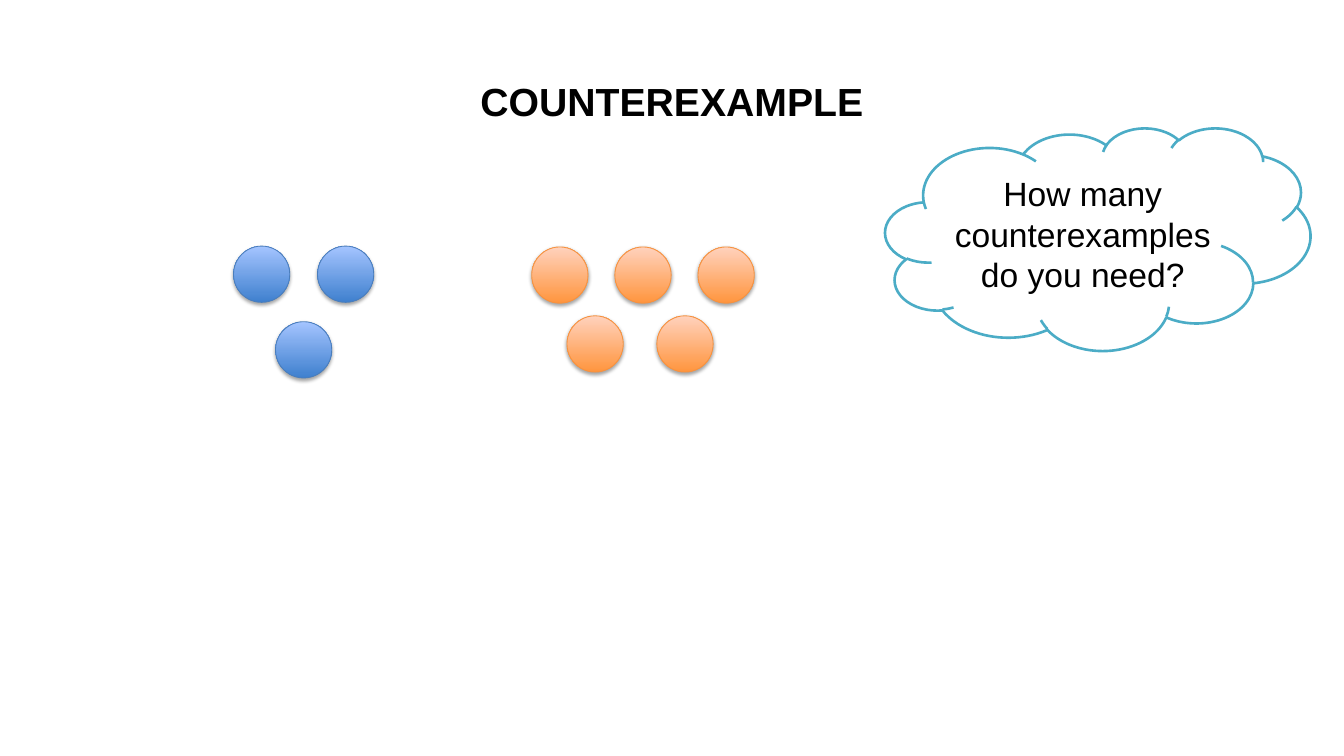
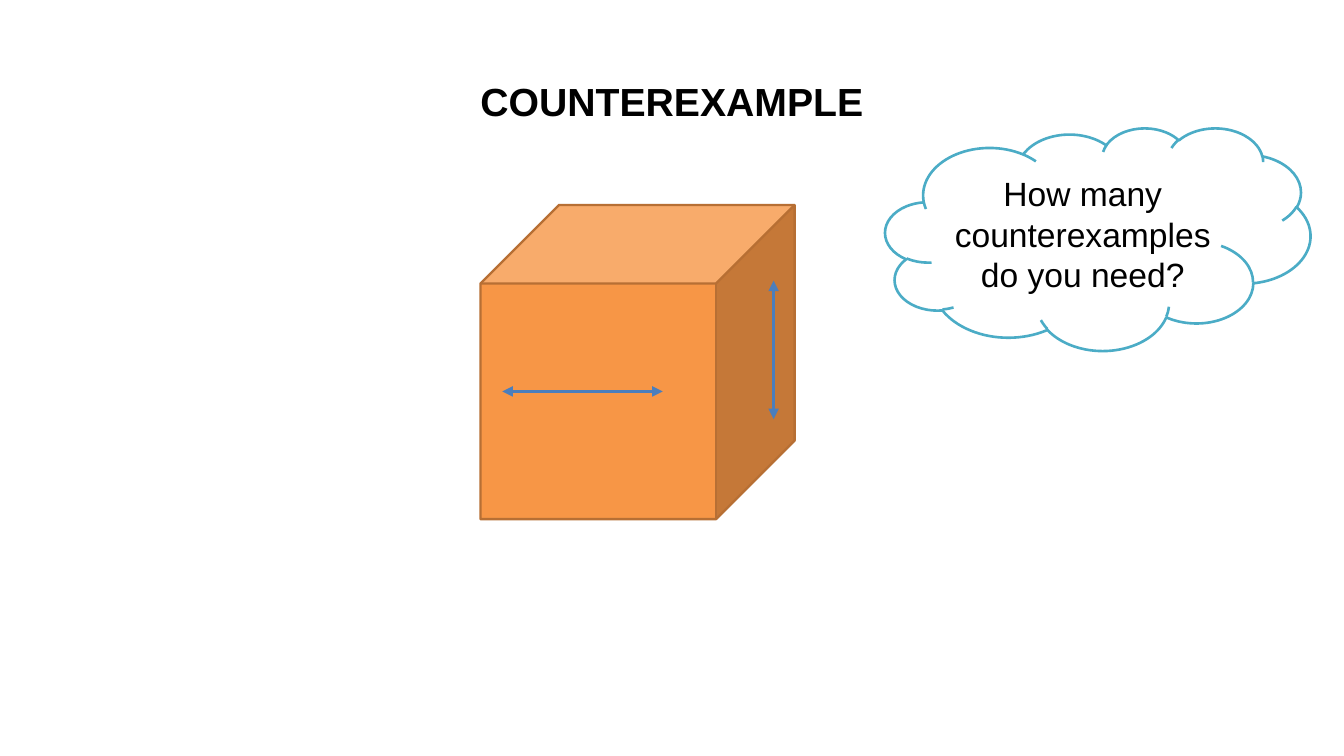
from lxml import etree
from pptx import Presentation
from pptx import util as u
from pptx.dml.color import RGBColor
from pptx.enum import shapes, text
from pptx.oxml.ns import qn

COLORS = {
    "text": "000000",
    "white": "FFFFFF",
    "cloud line": "4BACC6",
    "cube": "F79646",
    "cube line": "B76F34",
    "arrow": "4B7EBC",
}
# Bottom colour, top colour, outline
BALLS = {
    "blue": ("3F80CE", "A4C4FF", "4B7EBC"),
    "orange": ("FF953E", "FFD2BD", "F69240"),
}
FONT = "Arial"
TITLE_ONLY = 5

presentation = Presentation()
presentation.slide_width, presentation.slide_height = u.Inches(16), u.Inches(9)
COLUMN = presentation.slide_width // 16
ROW = presentation.slide_height // 9


def place(*cells):
    """Turn alternating column and row counts into lengths."""
    return [round(cell * (ROW if i % 2 else COLUMN)) for i, cell in enumerate(cells)]


def add_shape(slide, kind, cells, line, width, fill=None):
    shape = slide.shapes.add_shape(kind, *place(*cells))
    shape.shadow.inherit = False
    shape.line.color.rgb = RGBColor.from_string(line)
    shape.line.width = u.Pt(width)
    if fill:
        shape.fill.solid()
        shape.fill.fore_color.rgb = RGBColor.from_string(fill)
    return shape


# Title and question cloud on both slides
slides = []
for _ in range(2):
    slide = presentation.slides.add_slide(presentation.slide_layouts[TITLE_ONLY])
    slides.append(slide)

    title = slide.shapes.title
    title.left, title.top, title.width, title.height = place(0, 0.86, 16, 0.67)
    cloud = add_shape(slide, shapes.MSO_SHAPE.CLOUD, (10.54, 1.52, 5.06, 2.65),
                      COLORS["cloud line"], 2.25, COLORS["white"])

    for shape, wording, size, bold in (
        (title, "COUNTEREXAMPLE", 33.6, True),
        (cloud, "How many counterexamples do you need?", 28.8, False),
    ):
        frame = shape.text_frame
        frame.text = wording
        frame.word_wrap = True
        frame.auto_size = text.MSO_AUTO_SIZE.NONE
        frame.vertical_anchor = text.MSO_ANCHOR.MIDDLE
        paragraph = frame.paragraphs[0]
        paragraph.alignment = text.PP_ALIGN.CENTER
        paragraph.font.name = FONT
        paragraph.font.size = u.Pt(size)
        paragraph.font.bold = bold
        paragraph.font.color.rgb = RGBColor.from_string(COLORS["text"])

balls_slide, cube_slide = slides

# Rows of balls: colour, count, left, top, step
BALL_SIZE = 0.67
for color, count, left, top, step in (
    ("blue", 2, 2.78, 2.93, 1),
    ("blue", 1, 3.28, 3.83, 1),
    ("orange", 3, 6.33, 2.94, 0.99),
    ("orange", 2, 6.75, 3.76, 1.07),
):
    bottom_color, top_color, outline = BALLS[color]
    for i in range(count):
        ball = add_shape(balls_slide, shapes.MSO_SHAPE.OVAL,
                         (left + i * step, top, BALL_SIZE, BALL_SIZE), outline, 0.75)
        ball.fill.gradient()
        ball.fill.gradient_angle = 90
        for stop, stop_color, position in zip(
                ball.fill.gradient_stops, (bottom_color, top_color), (0, 1)):
            stop.color.rgb = RGBColor.from_string(stop_color)
            stop.position = position

        # Soft shadow below the ball
        effects = ball.element.spPr.find(qn("a:effectLst"))
        shadow = etree.SubElement(effects, qn("a:outerShdw"), blurRad=str(u.Pt(3.1)),
                                  dist=str(u.Pt(1.8)), dir="5400000", rotWithShape="0")
        shade = etree.SubElement(shadow, qn("a:srgbClr"), val=COLORS["text"])
        etree.SubElement(shade, qn("a:alpha"), val="35000")

# Cube with a double-headed arrow on two faces
add_shape(cube_slide, shapes.MSO_SHAPE.CUBE, (5.72, 2.44, 3.74, 3.74),
          COLORS["cube line"], 2, COLORS["cube"])
for ends in ((5.98, 4.66, 7.89, 4.66), (9.21, 3.34, 9.21, 4.99)):
    arrow = cube_slide.shapes.add_connector(shapes.MSO_CONNECTOR.STRAIGHT, *place(*ends))
    arrow.line.color.rgb = RGBColor.from_string(COLORS["arrow"])
    arrow.line.width = u.Pt(3)
    for end in ("a:headEnd", "a:tailEnd"):
        etree.SubElement(arrow.line._get_or_add_ln(), qn(end), type="triangle")
    etree.SubElement(arrow.element.spPr, qn("a:effectLst"))

presentation.save("out.pptx")
